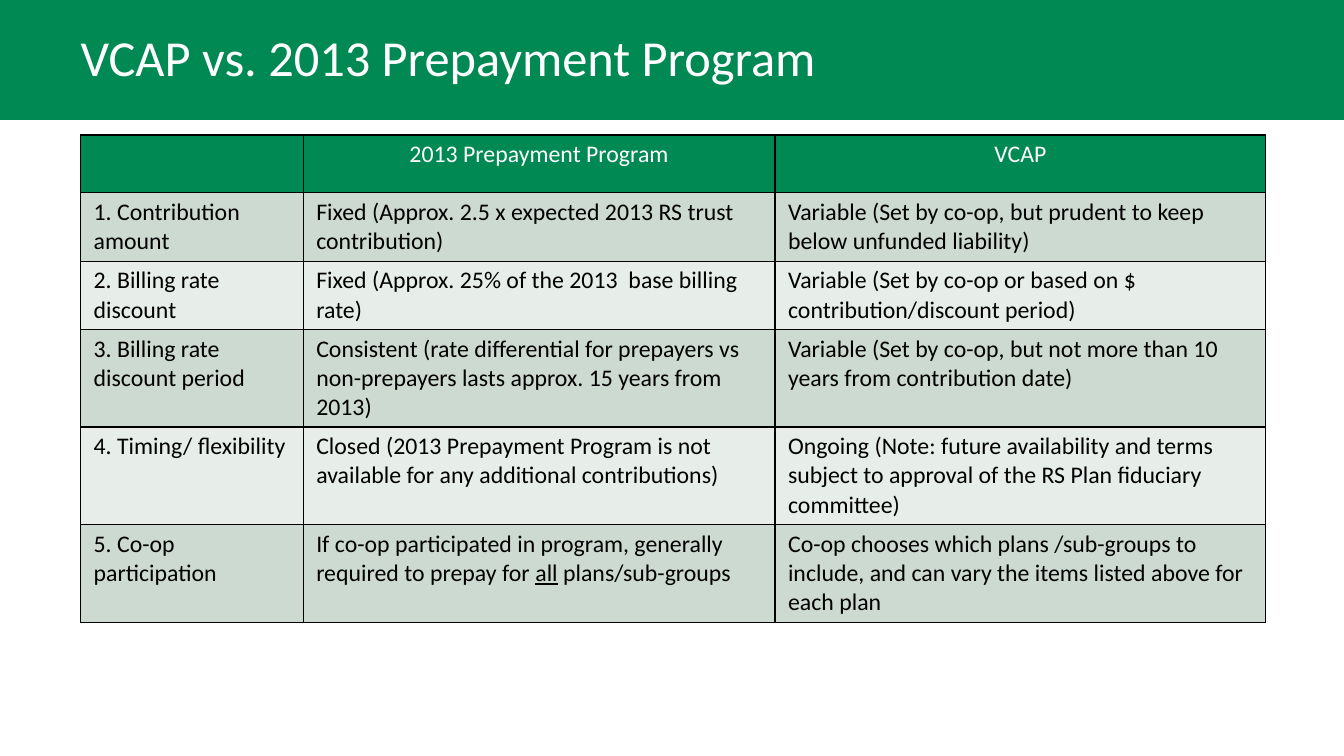
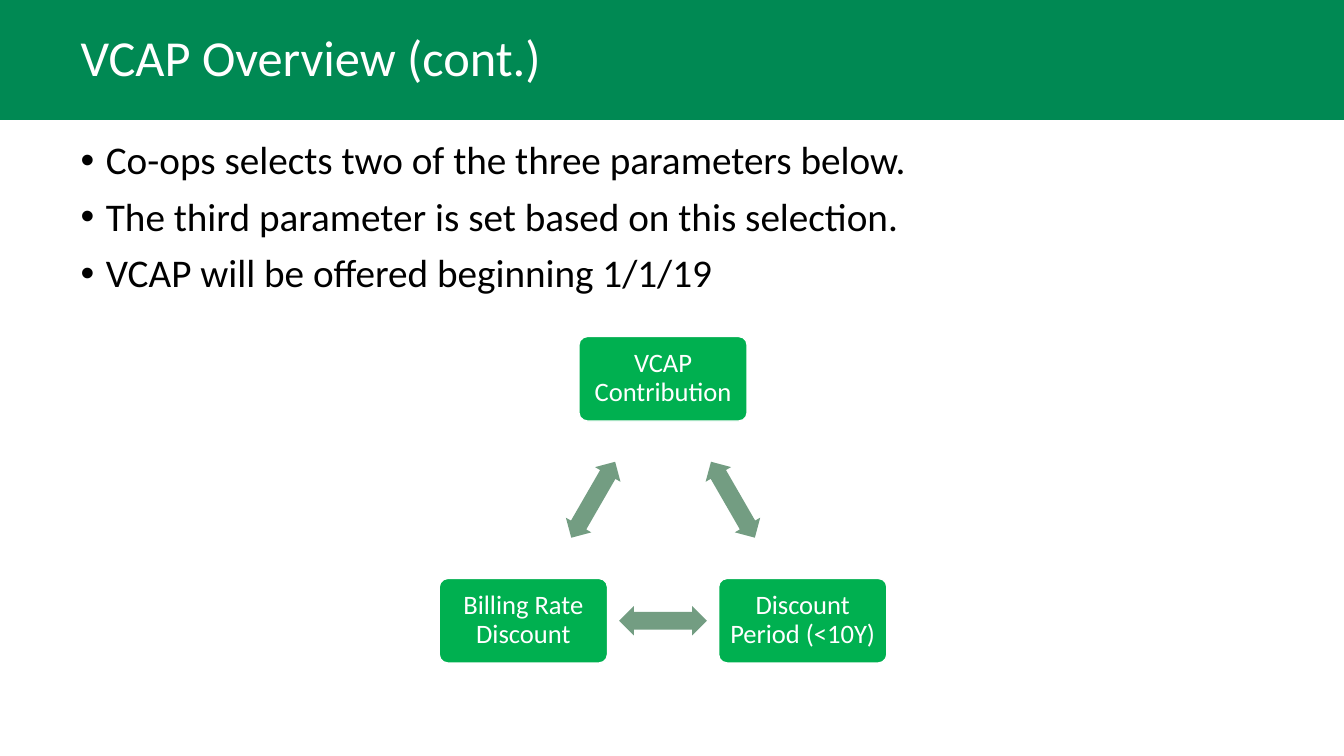
import math

from pptx import Presentation
from pptx import util as u
from pptx.dml.color import RGBColor
from pptx.enum import shapes, text
from pptx.oxml import xmlchemy

FONT = "Calibri"
COLORS = {
    "band": "008953",
    "white": "FFFFFF",
    "black": "000000",
    "odd_row": "CCDAD1",
    "even_row": "E7EDE9",
    "node": "00B050",
    "arrow": "739D82",
}
SLIDE_WIDTH, SLIDE_HEIGHT = 33.87, 19.05
COLUMN_WIDTHS = (5.61, 11.89, 12.37)
ROW_HEIGHTS = (1.46, 1.72, 1.72, 2.46, 2.46, 2.46)
COMPARISON = (
    ("", "2013 Prepayment Program", "VCAP"),
    (
        "1. Contribution amount",
        "Fixed (Approx. 2.5 x expected 2013 RS trust contribution)",
        "Variable (Set by co-op, but prudent to keep below unfunded liability)",
    ),
    (
        "2. Billing rate discount",
        "Fixed (Approx. 25% of the 2013  base billing rate)",
        "Variable (Set by co-op or based on $ contribution/discount period)",
    ),
    (
        "3. Billing rate discount period",
        "Consistent (rate differential for prepayers vs non-prepayers lasts approx. 15 years from 2013)",
        "Variable (Set by co-op, but not more than 10 years from contribution date)",
    ),
    (
        "4. Timing/ flexibility",
        "Closed (2013 Prepayment Program is not available for any additional contributions)",
        "Ongoing (Note: future availability and terms subject to approval of the RS Plan fiduciary committee)",
    ),
    (
        "5. Co-op participation",
        "If co-op participated in program, generally required to prepay for _all_ plans/sub-groups",
        "Co-op chooses which plans /sub-groups to include, and can vary the items listed above for each plan",
    ),
)
BULLETS = (
    "Co-ops selects two of the three parameters below.",
    "The third parameter is set based on this selection.",
    "VCAP will be offered beginning 1/1/19",
)
PARAMETERS = ("VCAP Contribution", "Discount Period (<10Y)", "Billing Rate Discount")


def color(name):
    """Return a palette colour."""
    return RGBColor.from_string(COLORS[name])


def lengths(*values):
    """Convert centimetres to lengths."""
    return [u.Cm(value) for value in values]


def write(paragraph, content, size, color_name):
    """Write text into a paragraph, underlining parts between underscores."""
    for index, part in enumerate(content.split("_")):
        run = paragraph.add_run()
        run.text = part
        run.font.name = FONT
        run.font.size = u.Pt(size)
        run.font.color.rgb = color(color_name)
        if index % 2:
            run.font.underline = True


def set_margins(owner, horizontal, top, bottom):
    """Set the inner margins of a text frame or cell."""
    owner.margin_left = owner.margin_right = u.Cm(horizontal)
    owner.margin_top, owner.margin_bottom = u.Cm(top), u.Cm(bottom)


def add_filled(slide, kind, box, fill):
    """Add a plain filled shape without outline or shadow."""
    shape = slide.shapes.add_shape(kind, *lengths(*box))
    shape.shadow.inherit = False
    shape.fill.solid()
    shape.fill.fore_color.rgb = color(fill)
    shape.line.fill.background()
    return shape


def add_titled_slide(presentation, title):
    """Add a blank slide with the green title band."""
    slide = presentation.slides.add_slide(presentation.slide_layouts[6])
    add_filled(slide, shapes.MSO_SHAPE.RECTANGLE, (0, 0, SLIDE_WIDTH, 3.02), "band")
    frame = slide.shapes.add_textbox(*lengths(1.78, 0, 30.58, 2.92)).text_frame
    frame.word_wrap = True
    frame.vertical_anchor = text.MSO_ANCHOR.MIDDLE
    set_margins(frame, 0.25, 0.13, 0)
    paragraph = frame.paragraphs[0]
    paragraph.line_spacing = 0.9
    write(paragraph, title, 36, "white")
    return slide


def add_child(parent, tag, **attributes):
    """Append a DrawingML element with attributes."""
    element = xmlchemy.OxmlElement(tag)
    for key, value in attributes.items():
        element.set(key, value)
    parent.append(element)
    return element


def set_borders(cell):
    """Draw a thin black border on every side of a cell."""
    properties = cell._tc.get_or_add_tcPr()
    for side in ("a:lnL", "a:lnR", "a:lnT", "a:lnB"):
        line = add_child(properties, side, w=str(u.Pt(1)))
        add_child(add_child(line, "a:solidFill"), "a:srgbClr", val=COLORS["black"])


def add_comparison(slide, left, top):
    """Add the programme comparison table."""
    box = lengths(left, top, sum(COLUMN_WIDTHS), sum(ROW_HEIGHTS))
    table = slide.shapes.add_table(len(COMPARISON), len(COLUMN_WIDTHS), *box).table
    for column, width in zip(table.columns, COLUMN_WIDTHS):
        column.width = u.Cm(width)
    for row_index, (row, height) in enumerate(zip(table.rows, ROW_HEIGHTS)):
        row.height = u.Cm(height)
        header = row_index == 0
        fill = "band" if header else ("even_row", "odd_row")[row_index % 2]
        for cell, content in zip(row.cells, COMPARISON[row_index]):
            set_borders(cell)
            cell.fill.solid()
            cell.fill.fore_color.rgb = color(fill)
            set_margins(cell, 0.33, 0.13, 0.13)
            paragraph = cell.text_frame.paragraphs[0]
            if header:
                paragraph.alignment = text.PP_ALIGN.CENTER
            if content:
                write(paragraph, content, 17, "white" if header else "black")


def add_bullets(slide, box):
    """Add the bulleted list."""
    frame = slide.shapes.add_textbox(*lengths(*box)).text_frame
    frame.word_wrap = True
    for index, content in enumerate(BULLETS):
        paragraph = frame.add_paragraph() if index else frame.paragraphs[0]
        paragraph.line_spacing = 0.9
        if index:
            paragraph.space_before = u.Pt(10)
        properties = paragraph._p.get_or_add_pPr()
        properties.set("marL", str(u.Cm(0.64)))
        properties.set("indent", str(u.Cm(-0.64)))
        add_child(properties, "a:buFont", typeface="Arial")
        add_child(properties, "a:buChar", char="•")
        write(paragraph, content, 28, "black")


def add_parameter_cycle(slide, left, top, width):
    """Add the triangle of parameters joined by double arrows."""
    node_width, node_height = 4.24, 2.13
    arrow_width, arrow_height = 2.21, 0.74
    radius = (width - node_width) / (2 * math.cos(math.radians(30)))
    center_x, center_y = left + width / 2, top + node_height / 2 + radius
    step = 360 / len(PARAMETERS)

    def place(kind, angle, distance, part_width, part_height, fill):
        """Add a shape centred at an angle clockwise from the top."""
        x = center_x + distance * math.sin(math.radians(angle))
        y = center_y - distance * math.cos(math.radians(angle))
        box = (x - part_width / 2, y - part_height / 2, part_width, part_height)
        return add_filled(slide, kind, box, fill)

    for index, content in enumerate(PARAMETERS):
        angle = index * step
        node = place(shapes.MSO_SHAPE.ROUNDED_RECTANGLE, angle, radius,
                     node_width, node_height, "node")
        node.adjustments[0] = 0.1
        node.line.color.rgb = color("white")
        node.line.width = u.Pt(1)
        frame = node.text_frame
        frame.word_wrap = True
        frame.vertical_anchor = text.MSO_ANCHOR.MIDDLE
        set_margins(frame, 0.2, 0.2, 0.2)
        paragraph = frame.paragraphs[0]
        paragraph.alignment = text.PP_ALIGN.CENTER
        paragraph.line_spacing = 0.9
        write(paragraph, content, 19, "white")

        middle = angle + step / 2
        arrow = place(shapes.MSO_SHAPE.LEFT_RIGHT_ARROW, middle, radius / 2,
                      arrow_width, arrow_height, "arrow")
        arrow.adjustments[0], arrow.adjustments[1] = 0.6, 0.5
        arrow.rotation = middle


def main():
    """Build and save the presentation."""
    presentation = Presentation()
    presentation.slide_width, presentation.slide_height = lengths(SLIDE_WIDTH, SLIDE_HEIGHT)
    slide = add_titled_slide(presentation, "VCAP vs. 2013 Prepayment Program")
    add_comparison(slide, 2.03, 3.4)
    slide = add_titled_slide(presentation, "VCAP Overview (cont.)")
    add_bullets(slide, (1.78, 3.43, 30.61, 12.47))
    add_parameter_cycle(slide, 11.07, 8.48, 11.28)
    presentation.save("out.pptx")


if __name__ == "__main__":
    main()
